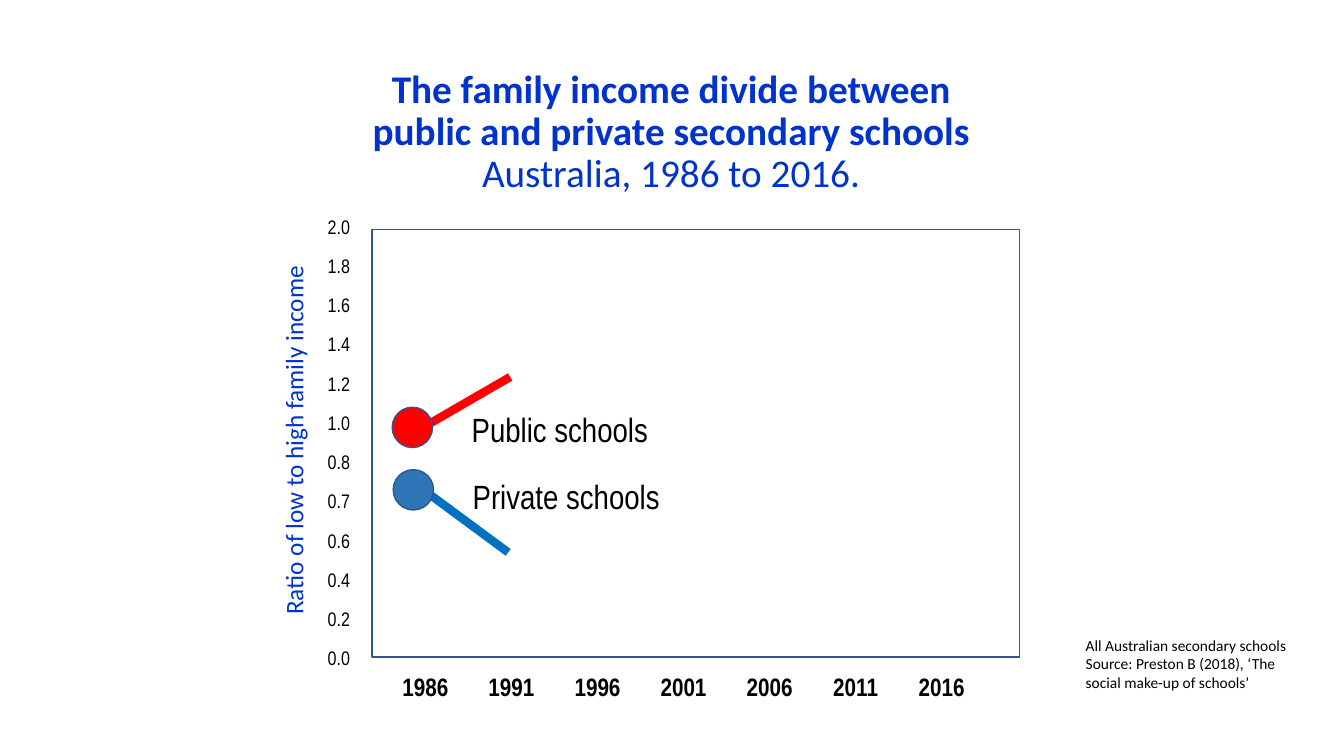
import pptx
import pptx.util
import pptx.dml.color
import pptx.enum.shapes
import pptx.enum.text
from dataclasses import dataclass
from pptx.util import Inches, Pt

ALIGN = pptx.enum.text.PP_ALIGN
ANCHOR = pptx.enum.text.MSO_ANCHOR
SHAPE = pptx.enum.shapes.MSO_SHAPE


@dataclass(frozen=True)
class Theme:
    heading: str = "0033CC"
    ink: str = "000000"
    outline: str = "325491"
    public_line: str = "FF0000"
    public_dot: str = "FF0000"
    private_line: str = "0070C0"
    private_dot: str = "2E75B6"
    body_font: str = "Calibri"
    chart_font: str = "Arial Narrow"
    title_size: int = 28
    label_size: int = 24
    axis_size: int = 18
    tick_size: int = 14
    note_size: int = 11


THEME = Theme()


def rgb(value):
    return pptx.dml.color.RGBColor.from_string(value)


def add_text(page, box, lines, font, color, anchor=ANCHOR.TOP, para_format=None):
    """Place lines, each a (text, bold) pair, as paragraphs of one text box."""
    text_box = page.shapes.add_textbox(*map(Inches, box))
    frame = text_box.text_frame
    frame.word_wrap = True
    frame.vertical_anchor = anchor
    for index, (text, bold) in enumerate(lines):
        para = frame.paragraphs[0] if index == 0 else frame.add_paragraph()
        for name, value in (para_format or {}).items():
            setattr(para, name, value)
        span = para.add_run()
        span.text = text
        for name, value in {**font, "bold": bold}.items():
            setattr(span.font, name, value)
        span.font.color.rgb = rgb(color)
    return text_box


def add_outlined(page, kind, box, fill=None):
    shape = page.shapes.add_shape(kind, *map(Inches, box))
    shape.shadow.inherit = False
    if fill:
        shape.fill.solid()
        shape.fill.fore_color.rgb = rgb(fill)
    else:
        shape.fill.background()
    shape.line.color.rgb = rgb(THEME.outline)
    shape.line.width = Pt(1)


def add_trend(page, start, end, color):
    line = page.shapes.add_connector(
        pptx.enum.shapes.MSO_CONNECTOR.STRAIGHT, *map(Inches, start + end))
    line.line.color.rgb = rgb(color)
    line.line.width = Pt(6)
    properties = line._element.spPr
    properties.append(pptx.oxml.parse_xml(
        '<a:effectLst xmlns:a="http://schemas.openxmlformats.org/drawingml/2006/main"/>'))


def add_title(page, box):
    lines = [("The family income divide between", True),
             ("public and private secondary schools", True),
             ("Australia, 1986 to 2016.", False)]
    add_text(page, box, lines,
             {"name": THEME.body_font, "size": Pt(THEME.title_size)},
             THEME.heading, ANCHOR.MIDDLE,
             {"alignment": ALIGN.CENTER, "line_spacing": Pt(30)})


def add_note(page, box):
    lines = [("All Australian secondary schools", False),
             ("Source: Preston B (2018), ‘The social make-up of schools’", False)]
    add_text(page, box, lines,
             {"name": THEME.body_font, "size": Pt(THEME.note_size)}, THEME.ink)


def add_axes(page, box):
    left, top, width, height = box
    ticks = "2.0 1.8 1.6 1.4 1.2 1.0 0.8 0.7 0.6 0.4 0.2 0.0".split()
    add_text(page, (left - 0.7, top - 0.16, 0.58, height + 0.38),
             [(tick, False) for tick in ticks],
             {"name": THEME.chart_font, "size": Pt(THEME.tick_size)}, THEME.ink,
             para_format={"alignment": ALIGN.RIGHT, "line_spacing": Pt(14),
                          "space_after": Pt(14)})

    years = range(1986, 2017, 5)
    first_center, year_span, year_width = left + 0.53, 5.12, 0.8
    for index, year in enumerate(years):
        center = first_center + index * year_span / (len(years) - 1)
        add_text(page, (center - year_width / 2, top + height + 0.09, year_width, 0.4),
                 [(str(year), True)],
                 {"name": THEME.chart_font, "size": Pt(THEME.axis_size)}, THEME.ink,
                 para_format={"alignment": ALIGN.CENTER})

    length, thickness = 4.77, 0.4
    axis_title = add_text(
        page, (left - 0.78 - length / 2, top + 1.89, length, thickness),
        [("Ratio of low to high family income", False)],
        {"name": THEME.body_font, "size": Pt(THEME.axis_size)}, THEME.heading,
        para_format={"alignment": ALIGN.CENTER})
    axis_title.rotation = 270


def add_income_plot(page, box):
    left, top, _, _ = box
    add_outlined(page, SHAPE.RECTANGLE, box)
    add_axes(page, box)
    # name, line start, line end, dot corner, label corner: offsets from the plot
    series = [
        ("Public schools", (0.42, 2.01), (1.37, 1.46), (0.2, 1.76), (0.89, 1.73),
         THEME.public_line, THEME.public_dot),
        ("Private schools", (0.43, 2.52), (1.35, 3.2), (0.21, 2.38), (0.9, 2.39),
         THEME.private_line, THEME.private_dot),
    ]
    for name, *offsets, line_color, dot_color in series:
        start, end, dot, label = [(left + x, top + y) for x, y in offsets]
        add_trend(page, start, end, line_color)
        add_outlined(page, SHAPE.OVAL, dot + (0.4, 0.4), dot_color)
        add_text(page, label + (2.09, 0.5), [(name, False)],
                 {"name": THEME.chart_font, "size": Pt(THEME.label_size)}, THEME.ink)


def main():
    deck = pptx.Presentation()
    deck.slide_width, deck.slide_height = Inches(13.33), Inches(7.5)
    page = deck.slides.add_slide(deck.slide_layouts[6])
    add_title(page, (2.68, 0.64, 7.95, 1.35))
    add_note(page, (10.67, 6.26, 2.37, 0.65))
    add_income_plot(page, (3.69, 2.28, 6.42, 4.24))
    deck.save("out.pptx")


if __name__ == "__main__":
    main()
